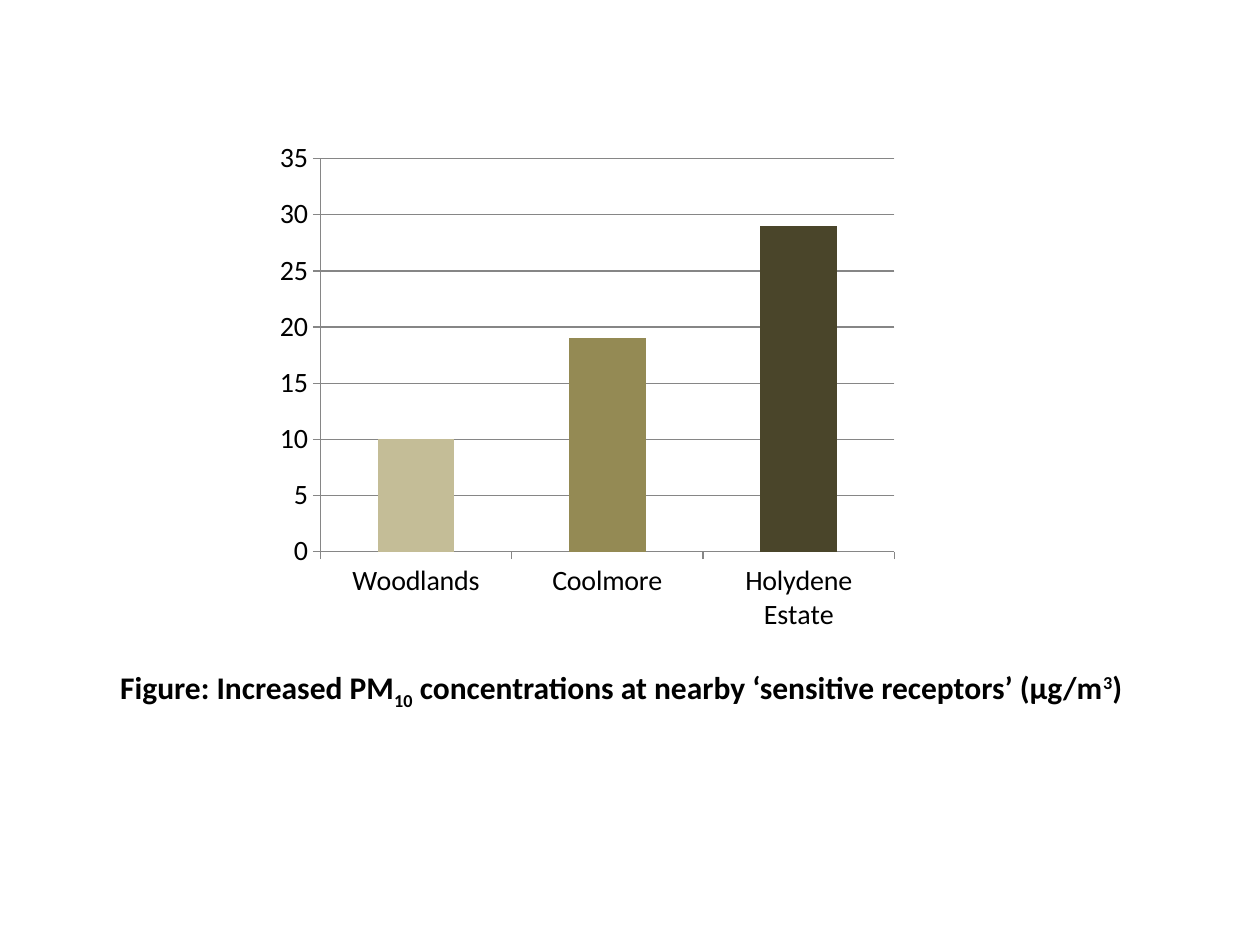
from lxml.etree import SubElement
from pptx import Presentation
from pptx.chart.data import CategoryChartData
from pptx.dml.color import RGBColor
from pptx.enum.chart import XL_CHART_TYPE as ChartType, XL_TICK_MARK as TickMark
from pptx.enum.text import MSO_ANCHOR as Anchor, PP_ALIGN as Align
from pptx.oxml.ns import qn
from pptx.util import Inches, Pt

FONT = "Calibri"
BLACK = RGBColor(0x00, 0x00, 0x00)
AXIS_GREY = RGBColor(0x86, 0x86, 0x86)
SERIES_BLUE = RGBColor(0x4F, 0x81, 0xBD)
LIGHT_TAN = RGBColor(0xC4, 0xBD, 0x97)
OLIVE = RGBColor(0x94, 0x8A, 0x54)
DARK_OLIVE = RGBColor(0x4A, 0x45, 0x2A)

WIDTH, HEIGHT = Inches(10), Inches(7.5)
RECEPTORS = [
    ("Woodlands", 10, LIGHT_TAN),
    ("Coolmore", 19, OLIVE),
    ("Holydene Estate", 29, DARK_OLIVE),
]
CAPTION = [
    ("Figure: Increased PM", 0),
    ("10", -25),
    (" concentrations at nearby ‘sensitive receptors’ (µg/m", 0),
    ("3", 30),
    (")", 0),
]


def share(left, top, width, height):
    return [
        int(part * size)
        for part, size in zip((left, top, width, height), (WIDTH, HEIGHT) * 2)
    ]


def style_font(font, size):
    font.name = FONT
    font.size = Pt(size)
    font.color.rgb = BLACK


def add_caption(slide, box):
    caption = slide.placeholders[1]
    caption.left, caption.top, caption.width, caption.height = box
    frame = caption.text_frame
    frame.word_wrap = True
    frame.vertical_anchor = Anchor.TOP
    paragraph = frame.paragraphs[0]
    paragraph.alignment = Align.CENTER
    properties = paragraph._p.get_or_add_pPr()
    properties.set("marL", str(Inches(0.38)))
    properties.set("indent", str(-Inches(0.38)))
    SubElement(properties, qn("a:buNone"))
    for text, baseline in CAPTION:
        run = paragraph.add_run()
        run.text = text
        style_font(run.font, 18)
        run.font.bold = True
        if baseline:
            run._r.get_or_add_rPr().set("baseline", str(baseline * 1000))


def style_line(line):
    line.color.rgb = AXIS_GREY
    line.width = Pt(0.75)


def add_column_chart(slide, box):
    names, values, colors = zip(*RECEPTORS)
    data = CategoryChartData()
    data.categories = names
    data.add_series("Series 1", values)
    chart = slide.shapes.add_chart(ChartType.COLUMN_CLUSTERED, *box, data).chart
    chart.has_legend = False
    chart.has_title = False
    style_font(chart.font, 16)

    plot = chart.plots[0]
    plot.gap_width = 150
    plot.vary_by_categories = False
    series = plot.series[0]
    series.format.fill.solid()
    series.format.fill.fore_color.rgb = SERIES_BLUE
    for index, color in enumerate(colors):
        fill = series.points[index].format.fill
        fill.solid()
        fill.fore_color.rgb = color

    for axis in (chart.category_axis, chart.value_axis):
        axis.major_tick_mark = TickMark.OUTSIDE
        axis.minor_tick_mark = TickMark.NONE
        style_line(axis.format.line)
    value_axis = chart.value_axis
    value_axis.minimum_scale = 0
    value_axis.maximum_scale = 35
    value_axis.major_unit = 5
    value_axis.has_major_gridlines = True
    style_line(value_axis.major_gridlines.format.line)


def remove_title(slide):
    title = slide.shapes.title._element
    title.getparent().remove(title)


def main():
    presentation = Presentation()
    presentation.slide_width, presentation.slide_height = WIDTH, HEIGHT
    slide = presentation.slides.add_slide(presentation.slide_layouts[1])
    remove_title(slide)
    add_caption(slide, share(0.072, 0.7, 0.842, 0.076))
    add_column_chart(slide, share(0.212, 0.139, 0.508, 0.541))
    presentation.save("out.pptx")


if __name__ == "__main__":
    main()
